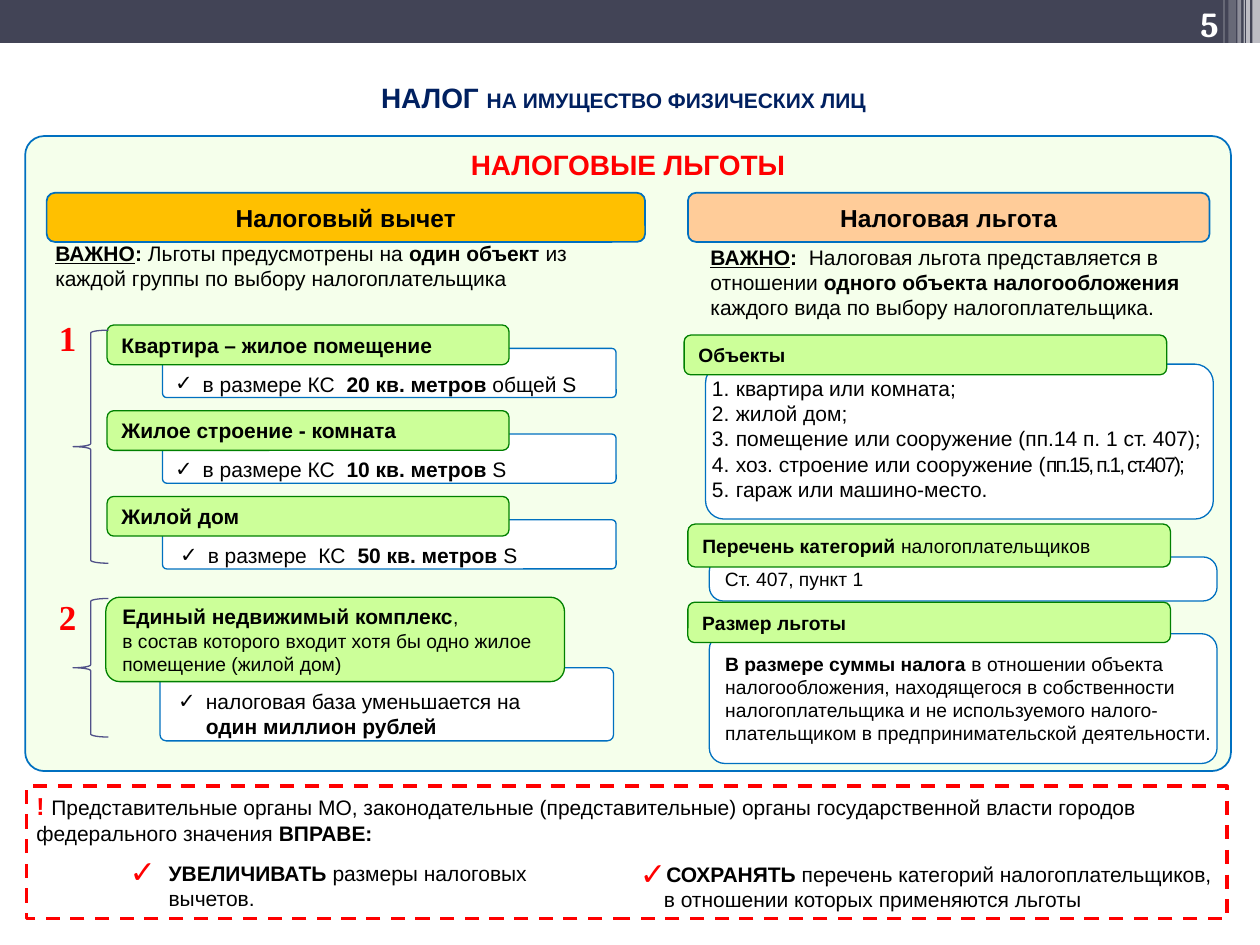
from lxml import etree
from pptx import Presentation
from pptx.dml.color import RGBColor
from pptx.enum.dml import MSO_LINE_DASH_STYLE as Dash
from pptx.enum.shapes import MSO_SHAPE as Shape
from pptx.enum.text import MSO_ANCHOR as Anchor, MSO_AUTO_SIZE as AutoSize, PP_ALIGN as Align
from pptx.oxml.ns import qn
from pptx.util import Inches, Pt

WHITE = RGBColor(0xFF, 0xFF, 0xFF)
BLACK = RGBColor(0, 0, 0)
RED = RGBColor(0xFF, 0, 0)
NAVY = RGBColor(0, 0x20, 0x60)
BLUE = RGBColor(0, 0x70, 0xC0)
SLATE = RGBColor(0x42, 0x44, 0x56)
INDIGO = RGBColor(0x50, 0x51, 0x88)
MINT = RGBColor(0xF5, 0xFF, 0xEB)
LIME = RGBColor(0xCC, 0xFF, 0x99)
GREEN = RGBColor(0, 0x80, 0)
AMBER = RGBColor(0xFF, 0xC0, 0)
PEACH = RGBColor(0xFF, 0xCC, 0x99)

COLUMNS, ROWS = 100, 75
INSETS = (1, 0.5, 1, 0.5)


def bold(text, **options):
    return text, dict(bold=True, **options)


def add_bullet(para, mark, indent, hanging, color=None, percent=None):
    props = para._p.get_or_add_pPr()
    props.set("marL", str(Inches(indent)))
    props.set("indent", str(-Inches(hanging)))
    if color is not None:
        holder = etree.SubElement(props, qn("a:buClr"))
        etree.SubElement(holder, qn("a:srgbClr")).set("val", str(color))
    if percent:
        etree.SubElement(props, qn("a:buSzPct")).set("val", str(percent * 1000))
    if mark == "1.":
        etree.SubElement(props, qn("a:buFont")).set("typeface", "+mj-lt")
        etree.SubElement(props, qn("a:buAutoNum")).set("type", "arabicPeriod")
    elif mark:
        etree.SubElement(props, qn("a:buFont")).set("typeface", "Arial")
        etree.SubElement(props, qn("a:buChar")).set("char", mark)
    else:
        etree.SubElement(props, qn("a:buNone"))


def write(para, parts, size=12, color=BLACK, font="Arial", align=Align.LEFT, bullet=None):
    if bullet:
        add_bullet(para, **bullet)
    para.alignment = align
    para.line_spacing = 1.0
    para.space_before = Pt(0)
    for part in parts:
        text, options = (part, {}) if isinstance(part, str) else part
        for index, line in enumerate(text.split("\n")):
            if index:
                para.add_line_break()
            if not line:
                continue
            span = para.add_run()
            span.text = line
            span.font.name = font
            span.font.size = Pt(options.get("size", size))
            span.font.bold = options.get("bold", False)
            span.font.underline = options.get("underline", False)
            span.font.color.rgb = options.get("color", color)
            if "spacing" in options:
                span._r.get_or_add_rPr().set("spc", str(options["spacing"]))


class Page:
    def __init__(self, deck, layout):
        self.column = deck.slide_width / COLUMNS
        self.row = deck.slide_height / ROWS
        self.slide = deck.slides.add_slide(layout)
        self.shapes = self.slide.shapes

    def place(self, left, top, width, height):
        return (round(left * self.column), round(top * self.row),
                round(width * self.column), round(height * self.row))

    def fill_text(self, box, paragraphs, anchor=Anchor.TOP, insets=INSETS, **style):
        frame = box.text_frame
        frame.word_wrap = True
        frame.auto_size = AutoSize.NONE
        frame.vertical_anchor = anchor
        frame.margin_left, frame.margin_top, frame.margin_right, frame.margin_bottom = (
            self.place(*insets))
        for index, parts in enumerate(paragraphs):
            para = frame.add_paragraph() if index else frame.paragraphs[0]
            write(para, parts, **style)

    def text(self, area, *parts, **style):
        box = self.shapes.add_textbox(*self.place(*area))
        self.fill_text(box, [parts], **style)

    def placeholder(self, box, area, paragraphs, **style):
        box.left, box.top, box.width, box.height = self.place(*area)
        box.element.getparent().append(box.element)
        self.fill_text(box, paragraphs, **style)

    def shape(self, kind, area, fill=None, line=None, weight=0.75, corner=None, opacity=None):
        box = self.shapes.add_shape(kind, *self.place(*area))
        box.shadow.inherit = False
        if fill is None:
            box.fill.background()
        else:
            box.fill.solid()
            box.fill.fore_color.rgb = fill
        if opacity:
            tone = box.element.spPr.find(qn("a:solidFill"))[0]
            etree.SubElement(tone, qn("a:alpha")).set("val", str(opacity * 1000))
        if line is None:
            box.line.fill.background()
        else:
            box.line.color.rgb = line
            box.line.width = Pt(weight)
        if corner is not None:
            box.adjustments[0] = corner
        return box

    def card(self, area, *parts, fill=WHITE, line=BLUE, weight=0.75, corner=None,
             anchor=Anchor.MIDDLE, **style):
        box = self.shape(Shape.ROUNDED_RECTANGLE, area, fill, line, weight, corner)
        self.fill_text(box, [parts], anchor=anchor, **style)

    def heading(self, area, text, fill):
        self.card(area, bold(text), fill=fill, weight=1, size=14, align=Align.CENTER)

    def label(self, area, *parts, size=12):
        self.card(area, *parts, fill=LIME, line=GREEN, size=size)

    def deduction(self, area, *parts, inset=0):
        self.card(area, *parts, corner=0.086, anchor=Anchor.BOTTOM, insets=(inset, 0, 0, 0),
                  bullet=dict(mark="✓", indent=0.31, hanging=0.22))

    def detail(self, area, *parts, corner):
        self.card(area, *parts, corner=corner, insets=(0, 0, 0, 0), size=11,
                  bullet=dict(mark=None, indent=0.09, hanging=0))

    def brace(self, area):
        self.shape(Shape.LEFT_BRACE, area, line=INDIGO)

    def number(self, top, text):
        self.text((3.7, top, 4, 5), bold(text), size=20, color=RED, font="Times New Roman")

    def right(self, area, *parts, indent):
        self.text(area, *parts, bullet=dict(
            mark="✓", indent=indent, hanging=indent, color=RED, percent=150))


def add_header(page):
    page.shape(Shape.RECTANGLE, (0, 0, COLUMNS, 3.4), SLATE)
    strips = [(99.4, 0.6, 65), (98.9, 0.3, 65), (98.7, 0.1, 60),
              (98.2, 0.3, 40), (97.5, 0.6, 20), (97.1, 0.1, 30)]
    for left, width, opacity in strips:
        page.shape(Shape.RECTANGLE, (left, 0, width, 3.4), WHITE, opacity=opacity)
    page.text((86.2, 0, 11.5, 4), bold("5"), anchor=Anchor.BOTTOM, size=20, color=WHITE,
              font="Cambria", align=Align.RIGHT)
    page.placeholder(page.shapes.title, (2.2, 6, 94.6, 4.3),
                     [[bold("НАЛОГ "), bold("НА ИМУЩЕСТВО ФИЗИЧЕСКИХ ЛИЦ", size=12)]],
                     insets=(0.4, 0.4, 0.4, 0.4), size=16, color=NAVY, align=Align.CENTER)


def add_deductions(page):
    page.heading((3.7, 15.3, 47.5, 3.9), "Налоговый вычет", AMBER)
    page.text((3.4, 18.6, 47.8, 5), bold("ВАЖНО", underline=True), bold(": "),
              "Льготы предусмотрены на ", bold("один объект"),
              " из каждой группы по выбору налогоплательщика")
    page.number(24.6, "1")
    page.number(46.8, "2")
    homes = [("Квартира – жилое помещение", "в размере КС  ", "20 кв. метров", " общей S", 0),
             ("Жилое строение - комната", "в размере КС  ", "10 кв. метров ", "S", 0),
             ("Жилой дом", "в размере  КС  ", "50 кв. метров ", "S", 0.4)]
    for index, (name, lead, amount, tail, inset) in enumerate(homes):
        top = 25.8 + 6.8 * index
        page.deduction((12.9, top + 1.85, 36, 3.9), lead, bold(amount), tail, inset=inset)
        page.label((8.5, top, 31.9, 3.15), bold(name))
    page.brace((5.8, 26.2, 2.8, 18.5))
    page.deduction((12.7, 53, 36, 5.8), "налоговая база уменьшается на \n",
                   bold("один миллион рублей"), inset=0.4)
    page.label((8.4, 47.4, 36.4, 6.7), bold("Единый недвижимый комплекс", size=12),
               ", \nв состав которого входит хотя бы одно жилое помещение (жилой дом)", size=11)
    page.brace((5.8, 47.5, 2.8, 11))


def add_reliefs(page, body):
    page.heading((54.6, 15.3, 41.4, 3.9), "Налоговая льгота", PEACH)
    page.text((55.4, 18.9, 41.5, 7.1), bold("ВАЖНО", underline=True), bold(":  "),
              "Налоговая льгота представляется в отношении",
              bold(" одного объекта налогообложения"),
              " каждого вида по выбору налогоплательщика.")
    page.shape(Shape.ROUNDED_RECTANGLE, (56, 28.9, 40.3, 12.3), WHITE, BLUE, corner=0.12)
    page.label((54.3, 26.6, 38.3, 3.15), bold("Объекты"), size=11)
    objects = [["квартира или комната;"], ["жилой дом;"],
               ["помещение или сооружение (пп.14 п. 1 ст. 407);"],
               ["хоз. строение или сооружение (", ("пп.15, п.1, ст.407);", dict(spacing=-110))],
               ["гараж или машино-место."]]
    page.placeholder(body, (55.5, 29.3, 44.5, 11.1), objects,
                     bullet=dict(mark="1.", indent=0.19, hanging=0.19))
    page.detail((56.3, 50.3, 40.3, 10.3), bold("В размере суммы налога "),
                "в отношении объекта налогообложения, находящегося в собственности "
                "налогоплательщика и не используемого налого-плательщиком в "
                "предпринимательской деятельности.", corner=0.12)
    page.detail((56.3, 44.2, 40.3, 3.5), "Ст. 407, пункт 1", corner=0.32)
    page.label((54.6, 41.6, 38.3, 3.4), bold("Перечень категорий"), " налогоплательщиков", size=11)
    page.label((54.6, 47.8, 38.3, 3.2), bold("Размер льготы"), size=11)


def add_rights(page):
    frame = page.shape(Shape.RECTANGLE, (2.1, 62.4, 95.3, 10.5), line=RED, weight=2)
    frame.line.dash_style = Dash.DASH
    page.text((1.9, 62.3, 95.6, 5.4), bold("! ", size=14, color=RED),
              "Представительные органы МО, законодательные (представительные) органы "
              "государственной власти городов федерального значения ", bold("ВПРАВЕ:"))
    page.right((9.3, 67.8, 40.5, 5), bold("УВЕЛИЧИВАТЬ "), "размеры налоговых вычетов.",
               indent=0.31)
    page.right((49.8, 67.9, 47.8, 5), bold("СОХРАНЯТЬ"),
               " перечень категорий налогоплательщиков, в отношении которых применяются льготы",
               indent=0.19)


def main():
    deck = Presentation()
    deck.slide_width, deck.slide_height = Inches(10), Inches(7.5)
    page = Page(deck, deck.slide_layouts[1])
    add_header(page)
    page.card((2, 10.8, 95.7, 50.4), bold("НАЛОГОВЫЕ ЛЬГОТЫ"), fill=MINT, weight=1,
              corner=0.03, anchor=Anchor.TOP,
              size=16, color=RED, align=Align.CENTER)
    add_deductions(page)
    add_reliefs(page, page.slide.placeholders[1])
    add_rights(page)
    deck.save("out.pptx")


if __name__ == "__main__":
    main()
